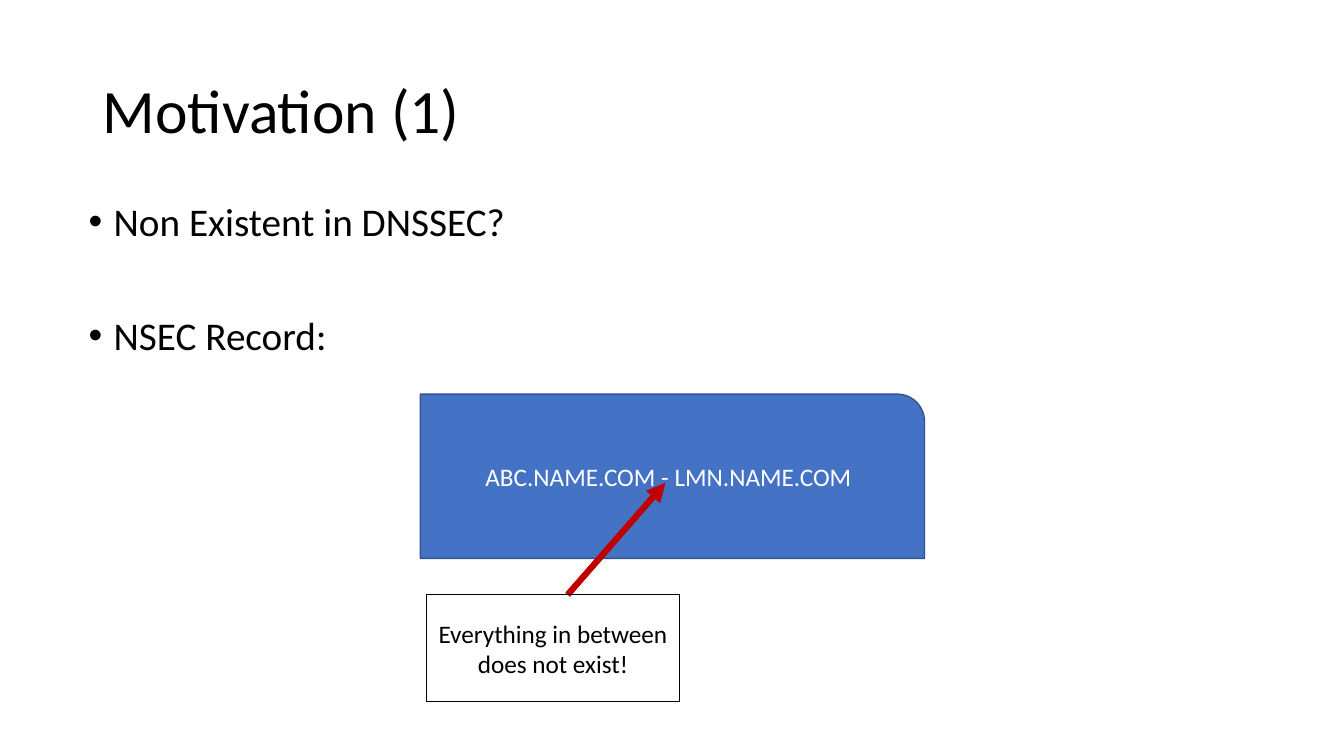
from lxml import etree
from pptx import Presentation
from pptx import util as u
from pptx.dml.color import RGBColor
from pptx.enum import shapes, text
from pptx.oxml.ns import qn

PX = 9144  # EMU per px, 100 px to the inch


def px(*lengths):
    return [u.Emu(length * PX) for length in lengths]


def color(value):
    return RGBColor.from_string(value)


class Deck:
    font = "Calibri"
    ink, paper, blue, navy, red = "000000", "FFFFFF", "4472C4", "325491", "C00000"

    def __init__(self, width, height):
        self.prs = Presentation()
        self.prs.slide_width, self.prs.slide_height = px(width, height)
        self.slide = self.prs.slides.add_slide(self.prs.slide_layouts[6])

    def style(self, paragraph, size, ink):
        for run in paragraph.runs:
            run.font.name = self.font
            run.font.size = u.Pt(size)
            run.font.color.rgb = color(ink)

    def textbox(self, box, lines, size, anchor):
        frame = self.slide.shapes.add_textbox(*px(*box)).text_frame
        frame.word_wrap = True
        frame.vertical_anchor = anchor
        frame.text = "\n".join(lines)
        for paragraph in frame.paragraphs:
            paragraph.line_spacing = 0.9
            self.style(paragraph, size, self.ink)
        return frame

    def bullets(self, box, lines, size, gap):
        frame = self.textbox(box, lines, size, text.MSO_ANCHOR.TOP)
        indent = px(25)[0]
        for index, paragraph in enumerate(frame.paragraphs):
            paragraph.space_before = u.Pt(gap if index else 0)
            props = paragraph._p.get_or_add_pPr()
            props.set("marL", str(indent))
            props.set("indent", str(-indent))
            etree.SubElement(props, qn("a:buFont")).set("typeface", "Arial")
            etree.SubElement(props, qn("a:buChar")).set("char", "•")

    def panel(self, kind, box, label, ink, line, fill=None):
        panel = self.slide.shapes.add_shape(kind, *px(*box))
        panel.shadow.inherit = False
        if fill:
            panel.fill.solid()
            panel.fill.fore_color.rgb = color(fill)
        else:
            panel.fill.background()
        panel.line.color.rgb = color(line)
        panel.line.width = u.Pt(1)
        frame = panel.text_frame
        frame.word_wrap = True
        frame.vertical_anchor = text.MSO_ANCHOR.MIDDLE
        frame.text = label
        frame.paragraphs[0].alignment = text.PP_ALIGN.CENTER
        self.style(frame.paragraphs[0], 18, ink)

    def arrow(self, start, end, ink, width):
        arrow = self.slide.shapes.add_connector(
            shapes.MSO_CONNECTOR.STRAIGHT, *px(*start, *end))
        arrow.line.color.rgb = color(ink)
        arrow.line.width = u.Pt(width)
        etree.SubElement(arrow.line._get_or_add_ln(), qn("a:tailEnd")).set("type", "triangle")
        etree.SubElement(arrow._element.spPr, qn("a:effectLst"))


def main():
    deck = Deck(1333, 750)

    # Title and points
    deck.textbox((92, 40, 1150, 145), ["Motivation (1)"], 44, text.MSO_ANCHOR.MIDDLE)
    deck.bullets((78, 196, 1150, 509),
                 ["Non Existent in DNSSEC?", "NSEC Record:"], 28, gap=51)

    # NSEC record with its explanation
    deck.panel(shapes.MSO_SHAPE.ROUND_1_RECTANGLE, (417, 391, 500, 163),
               "ABC.NAME.COM - LMN.NAME.COM", deck.paper, deck.navy, deck.blue)
    deck.arrow((563, 590), (660, 479), deck.red, 4.5)
    deck.panel(shapes.MSO_SHAPE.RECTANGLE, (423, 590, 251, 106),
               "Everything in between does not exist!", deck.ink, deck.ink)

    deck.prs.save("out.pptx")


if __name__ == "__main__":
    main()
